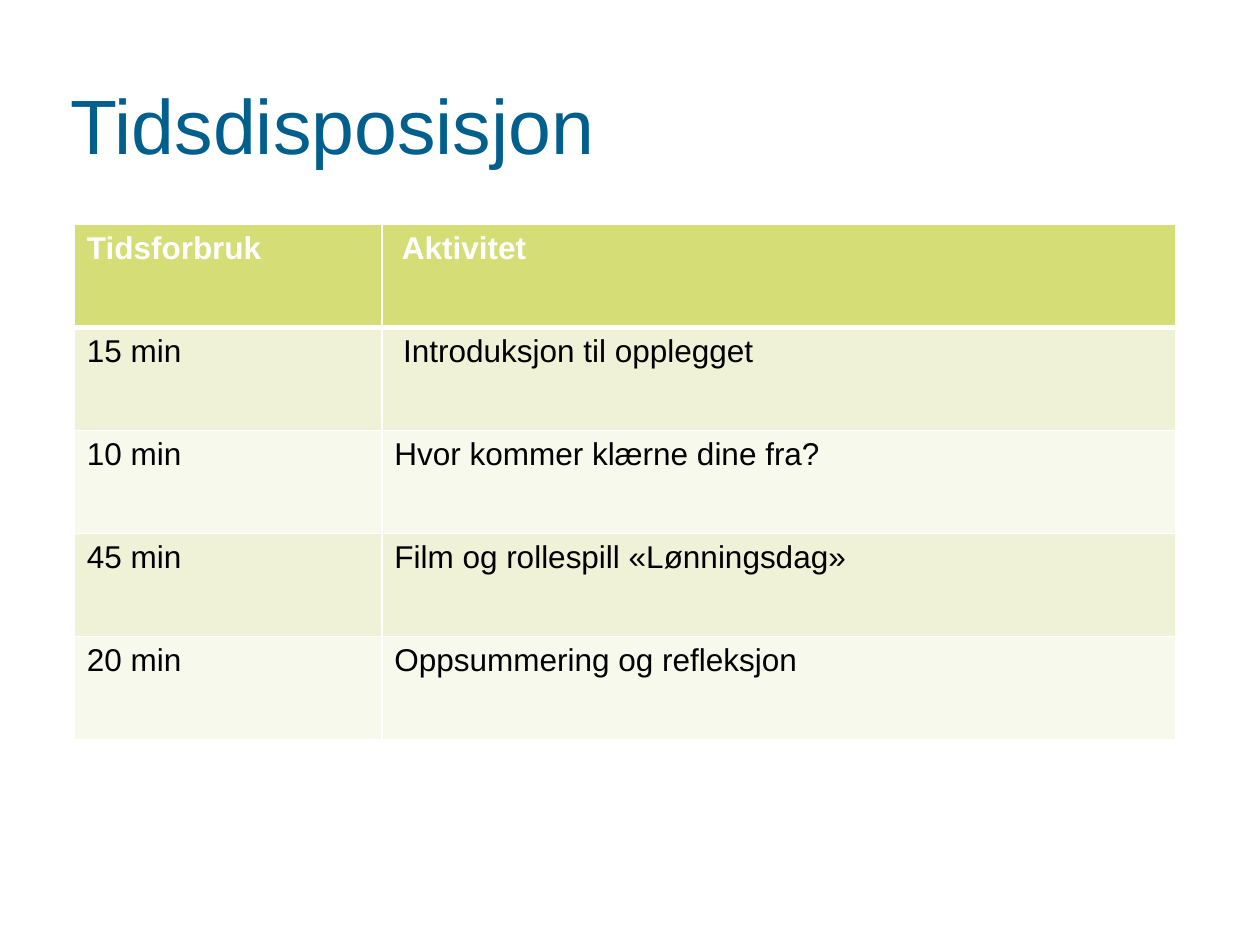
import pptx
import pptx.dml.color
import pptx.enum.text
import pptx.oxml.ns
import pptx.util
from lxml import etree
from pptx.util import Inches

FONT_NAME = "Arial"
TITLE_COLOR = "005F8D"
HEADER_FILL = "D4DD76"
BAND_FILLS = ("F7F9EC", "EFF2D6")  # even rows, odd rows
WHITE = "FFFFFF"
BLACK = "000000"

SCHEDULE = [
    ("Tidsforbruk", " Aktivitet"),
    ("15 min", " Introduksjon til opplegget"),
    ("10 min", "Hvor kommer klærne dine fra?"),
    ("45 min", "Film og rollespill «Lønningsdag»"),
    ("20 min", "Oppsummering og refleksjon"),
]
COLUMN_WIDTHS = (2.44, 6.3)


def color(hex_string):
    return pptx.dml.color.RGBColor.from_string(hex_string)


def set_attributes(target, values):
    for name, value in values.items():
        setattr(target, name, value)


def format_font(paragraph, size, hex_string, bold=False):
    set_attributes(paragraph.font, {
        "name": FONT_NAME, "size": pptx.util.Pt(size), "bold": bold})
    paragraph.font.color.rgb = color(hex_string)


def add_borders(cell, widths):
    """Draw white cell borders; widths maps L, R, T and B to points."""
    properties = cell._tc.get_or_add_tcPr()
    for side, width in widths.items():
        line = etree.SubElement(
            properties, pptx.oxml.ns.qn(f"a:ln{side}"), w=str(pptx.util.Pt(width)))
        fill = etree.SubElement(line, pptx.oxml.ns.qn("a:solidFill"))
        etree.SubElement(fill, pptx.oxml.ns.qn("a:srgbClr"), val=WHITE)


def place_title(slide, left, top, width, height):
    title = slide.shapes.title
    set_attributes(title, {
        "left": left, "top": top, "width": width, "height": height})
    set_attributes(title.text_frame, {
        "text": "Tidsdisposisjon",
        "word_wrap": True,
        "vertical_anchor": pptx.enum.text.MSO_ANCHOR.MIDDLE})
    paragraph = title.text_frame.paragraphs[0]
    paragraph.alignment = pptx.enum.text.PP_ALIGN.LEFT
    format_font(paragraph, 44, TITLE_COLOR)


def place_schedule(slide, left, top, width, height):
    table = slide.shapes.add_table(
        len(SCHEDULE), len(COLUMN_WIDTHS), left, top, width, height).table
    for column, share in zip(table.columns, COLUMN_WIDTHS):
        column.width = int(width * share / sum(COLUMN_WIDTHS))

    for row_index, texts in enumerate(SCHEDULE):
        header = row_index == 0
        # A thick rule separates the header from the first row
        widths = {"L": 1, "R": 1,
                  "T": 3 if row_index == 1 else 1,
                  "B": 3 if header else 1}
        for column_index, text in enumerate(texts):
            cell = table.cell(row_index, column_index)
            cell.text = text
            format_font(cell.text_frame.paragraphs[0], 18,
                        WHITE if header else BLACK, bold=header)
            add_borders(cell, widths)
            cell.fill.solid()
            cell.fill.fore_color.rgb = color(
                HEADER_FILL if header else BAND_FILLS[row_index % 2])


def main():
    presentation = pptx.Presentation()
    set_attributes(presentation, {
        "slide_width": Inches(10), "slide_height": Inches(7.5)})
    # Title Only layout
    slide = presentation.slides.add_slide(presentation.slide_layouts[5])
    place_title(slide, Inches(0.46), Inches(0.36), Inches(9.09), Inches(1.25))
    place_schedule(slide, Inches(0.59), Inches(1.78), Inches(8.74), Inches(4.09))
    presentation.save("out.pptx")


if __name__ == "__main__":
    main()
